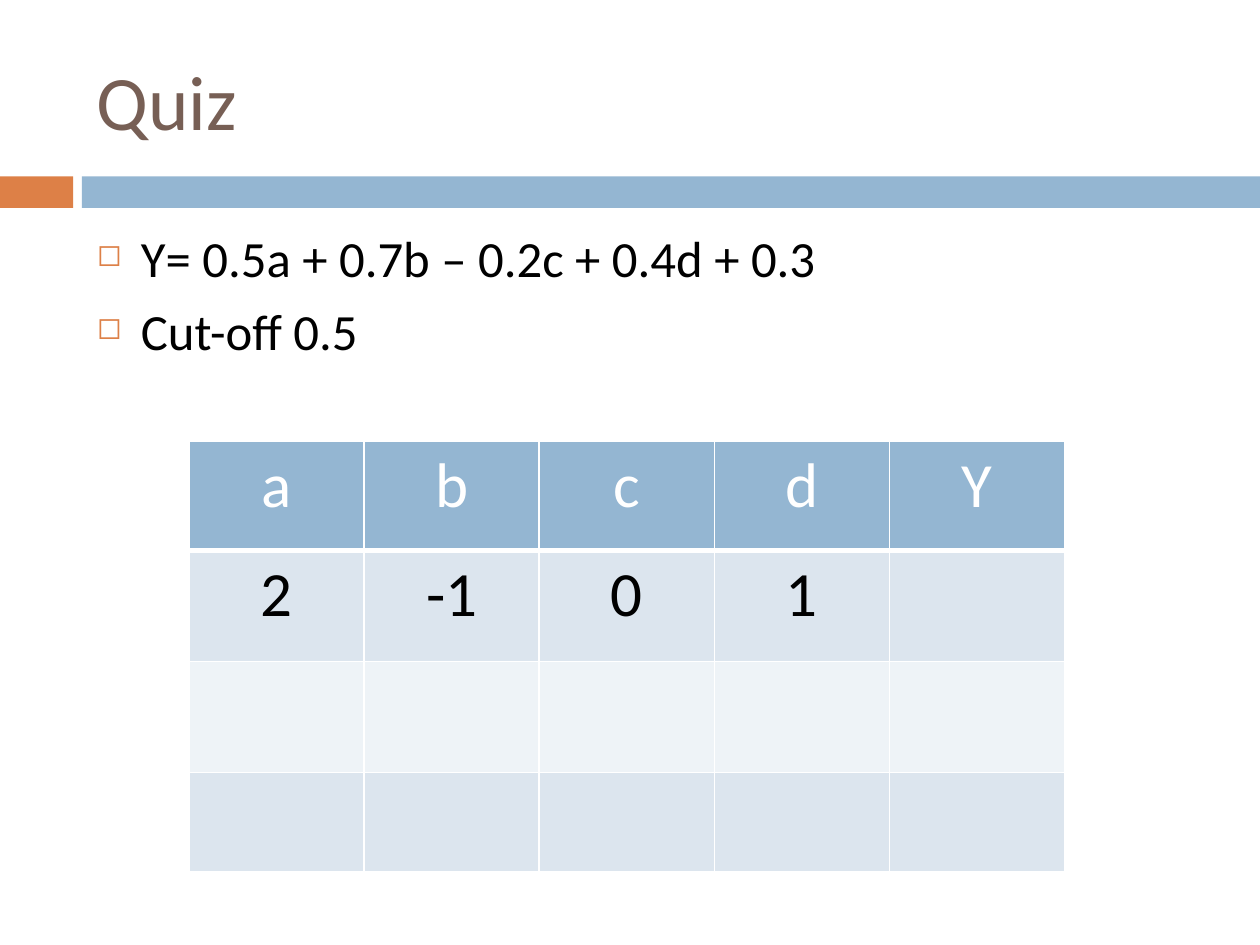
from dataclasses import dataclass

from lxml import etree
from pptx import Presentation, util as u
from pptx.dml.color import RGBColor
from pptx.enum import shapes, text
from pptx.oxml import ns

WIDTH, HEIGHT = 10, 7.5
FONT = "Calibri"
COLORS = {
    "orange": "DD8047",
    "blue": "94B6D2",
    "brown": "775F55",
    "black": "000000",
    "white": "FFFFFF",
    "band": "DCE5EE",
    "pale_band": "EEF3F7",
}


@dataclass(frozen=True)
class Box:
    left: float
    top: float
    width: float
    height: float

    def lengths(self) -> list:
        return [u.Inches(value) for value in (self.left, self.top, self.width, self.height)]


@dataclass(frozen=True)
class Bar:
    box: Box
    color: str


@dataclass(frozen=True)
class TableRow:
    height: float
    values: tuple
    fill: str
    color: str
    bottom_border: float = 1


MARGIN = 0.67
CONTENT_WIDTH = 8.92
BARS = (
    Bar(Box(0, 1.4, 0.58, 0.25), "orange"),
    Bar(Box(0.65, 1.4, WIDTH - 0.65, 0.25), "blue"),
)
BULLETS = ("Y= 0.5a + 0.7b – 0.2c + 0.4d + 0.3", "Cut-off 0.5")
COLUMNS, COLUMN_WIDTH = 5, 1.39
ROWS = (
    TableRow(0.87, ("a", "b", "c", "d", "Y"), "blue", "white", 3),
    TableRow(0.88, ("2", "-1", "0", "1", ""), "band", "black"),
    TableRow(0.88, ("",) * COLUMNS, "pale_band", "black"),
    TableRow(0.79, ("",) * COLUMNS, "band", "black"),
)


def rgb(name: str) -> RGBColor:
    return RGBColor.from_string(COLORS[name])


def add_child(parent, tag: str, **attributes):
    return etree.SubElement(parent, ns.qn(tag), attributes)


def style_runs(paragraph, size: float, color: str) -> None:
    for run in paragraph.runs:
        run.font.name = FONT
        run.font.size = u.Pt(size)
        run.font.color.rgb = rgb(color)


def add_bar(slide, bar: Bar) -> None:
    shape = slide.shapes.add_shape(shapes.MSO_SHAPE.RECTANGLE, *bar.box.lengths())
    shape.shadow.inherit = False
    shape.fill.solid()
    shape.fill.fore_color.rgb = rgb(bar.color)
    shape.line.fill.background()


def add_text(slide, box: Box, content: str, size: float, color: str, anchor):
    text_frame = slide.shapes.add_textbox(*box.lengths()).text_frame
    text_frame.word_wrap = True
    text_frame.vertical_anchor = anchor
    text_frame.text = content
    for paragraph in text_frame.paragraphs:
        style_runs(paragraph, size, color)
    return text_frame


def add_bullet(paragraph) -> None:
    paragraph.space_before = u.Pt(7)
    properties = paragraph._p.get_or_add_pPr()
    indent = u.Inches(0.35)
    properties.set("marL", str(indent))
    properties.set("indent", str(-indent))
    add_child(add_child(properties, "a:buClr"), "a:srgbClr", val=COLORS["orange"])
    add_child(properties, "a:buSzPct", val="60000")
    add_child(properties, "a:buChar", char="◻")


def set_borders(cell, top: float, bottom: float) -> None:
    properties = cell._tc.get_or_add_tcPr()
    for side, width in (("L", 1), ("R", 1), ("T", top), ("B", bottom)):
        line = add_child(properties, f"a:ln{side}", w=str(u.Pt(width)))
        add_child(add_child(line, "a:solidFill"), "a:srgbClr", val=COLORS["white"])


def add_quiz_table(slide, left: float, top: float) -> None:
    box = Box(left, top, COLUMNS * COLUMN_WIDTH, sum(row.height for row in ROWS))
    table = slide.shapes.add_table(len(ROWS), COLUMNS, *box.lengths()).table
    for column in table.columns:
        column.width = u.Inches(COLUMN_WIDTH)
    top_border = 1
    for row_index, row in enumerate(ROWS):
        table.rows[row_index].height = u.Inches(row.height)
        for column_index, value in enumerate(row.values):
            cell = table.cell(row_index, column_index)
            cell.margin_left = cell.margin_right = u.Inches(0.07)
            cell.margin_top = cell.margin_bottom = u.Inches(0.05)
            set_borders(cell, top_border, row.bottom_border)
            cell.fill.solid()
            cell.fill.fore_color.rgb = rgb(row.fill)
            cell.text_frame.text = value
            paragraph = cell.text_frame.paragraphs[0]
            paragraph.alignment = text.PP_ALIGN.CENTER
            style_runs(paragraph, 36, row.color)
        top_border = row.bottom_border


def main() -> None:
    presentation = Presentation()
    presentation.slide_width = u.Inches(WIDTH)
    presentation.slide_height = u.Inches(HEIGHT)
    slide = presentation.slides.add_slide(presentation.slide_layouts[6])
    for bar in BARS:
        add_bar(slide, bar)
    title_box = Box(MARGIN, 0.25, CONTENT_WIDTH, 1.08)
    add_text(slide, title_box, "Quiz", 44, "brown", text.MSO_ANCHOR.MIDDLE)
    body_box = Box(MARGIN, 1.75, CONTENT_WIDTH, 1.25)
    body = add_text(slide, body_box, "\n".join(BULLETS), 29, "black", text.MSO_ANCHOR.TOP)
    for paragraph in body.paragraphs:
        add_bullet(paragraph)
    add_quiz_table(slide, 0.15 * WIDTH, 3.5)
    presentation.save("out.pptx")


if __name__ == "__main__":
    main()
